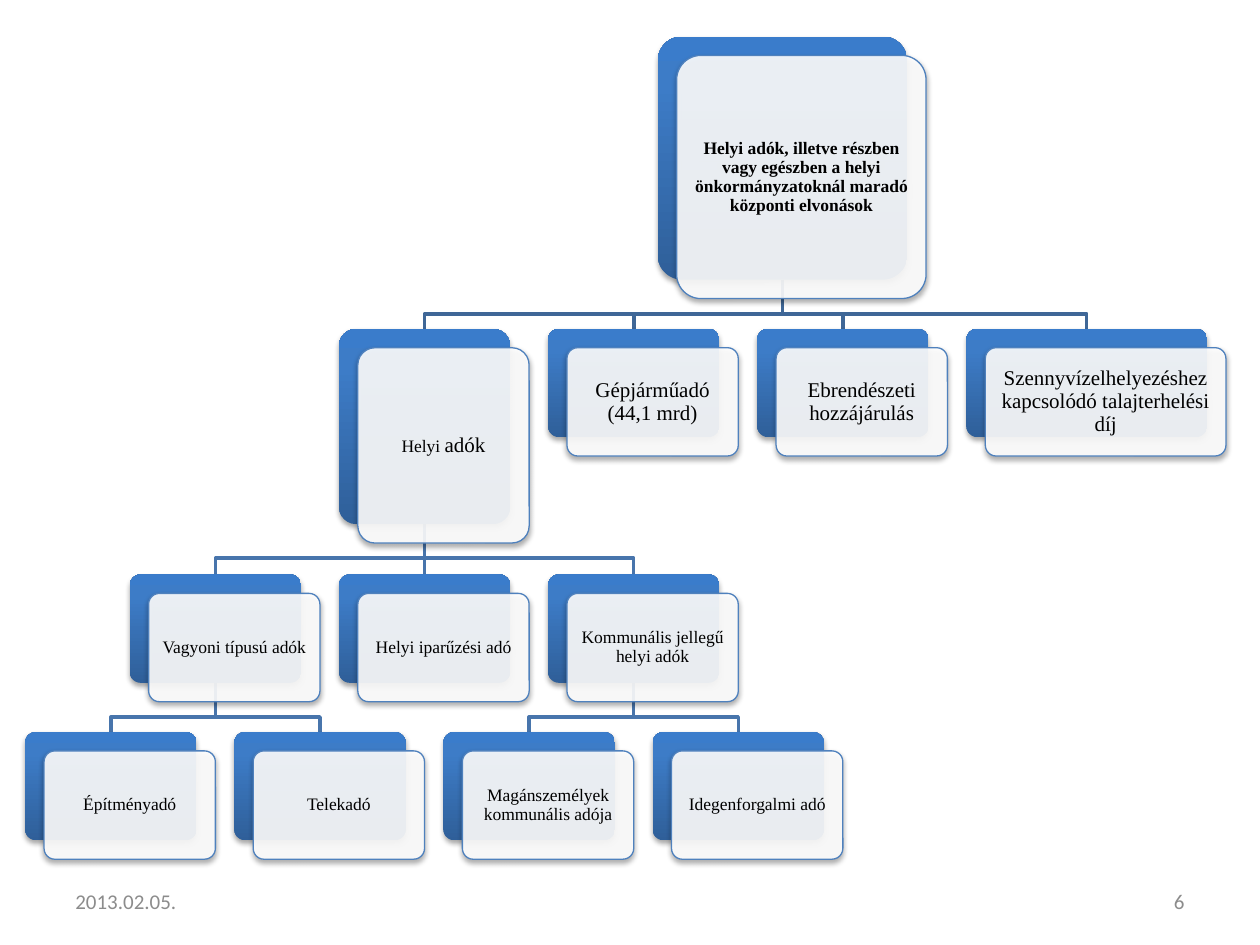
from dataclasses import dataclass

from lxml import etree
from pptx import Presentation
from pptx import util as u
from pptx.dml.color import RGBColor
from pptx.enum import shapes, text
from pptx.oxml.ns import qn


@dataclass(frozen=True)
class Theme:
    font: str = "Times New Roman"
    footer_font: str = "Calibri"
    small: int = 10
    large: int = 12
    ink: str = "000000"
    footer: str = "8C8C8C"
    card: str = "FFFFFF"
    card_line: str = "4F81BD"
    top_link: str = "3F6797"
    link: str = "4875AC"
    gradient: tuple = ((0, "2F5F99"), (80, "3D7CC7"), (100, "3A7CCB"))


@dataclass
class Node:
    left: float
    top: float
    w: float
    h: float
    runs: list  # (wording, type size)
    bold: bool = False
    parent: "Node" = None

    @property
    def centre(self):
        return self.left + self.w / 2


def rgb(value):
    return RGBColor.from_string(value)


class Chart:
    """Draws hierarchy elements on the current slide in one style."""

    OFFSET = 0.15  # front card against its backing
    BEND = 0.27  # drop from a parent to the crossbar

    def __init__(self, slide, theme):
        self.s, self.t = slide, theme

    def link(self, node):
        parent = node.parent
        x1, y1 = parent.centre, parent.top + parent.h
        x2, y2 = node.centre, node.top
        if abs(x1 - x2) < 0.01:
            sp = self.s.shapes.add_connector(
                shapes.MSO_CONNECTOR.STRAIGHT,
                *map(u.Inches, (x1, y1, x2, y2)))
            etree.SubElement(sp._element.spPr, qn("a:effectLst"))
        else:
            bar = y1 + self.BEND
            points = [(x1, bar), (x2, bar), (x2, y2)]
            fb = self.s.shapes.build_freeform(u.Inches(x1), u.Inches(y1))
            fb.add_line_segments(
                [(u.Inches(x), u.Inches(y)) for x, y in points], close=False)
            sp = fb.convert_to_shape()
            sp.fill.background()
            sp.shadow.inherit = False
        color = self.t.link if parent.parent else self.t.top_link
        sp.line.color.rgb = rgb(color)
        sp.line.width = u.Pt(2)

    def rounded(self, node, offset=0.0):
        sp = self.s.shapes.add_shape(
            shapes.MSO_SHAPE.ROUNDED_RECTANGLE,
            *map(u.Inches,
                 (node.left + offset, node.top + offset, node.w, node.h)))
        sp.adjustments[0] = 0.1
        return sp

    def shadow(self, sp):
        sp.shadow.inherit = False
        effects = sp._element.spPr.find(qn("a:effectLst"))
        shadow = etree.SubElement(
            effects, qn("a:outerShdw"), blurRad=str(u.Pt(3.1)),
            dist=str(u.Pt(1.8)), dir="5400000", rotWithShape="0")
        color = etree.SubElement(shadow, qn("a:srgbClr"), val="000000")
        etree.SubElement(color, qn("a:alpha"), val="35000")

    def backing(self, node):
        sp = self.rounded(node)
        sp.fill.gradient()
        sp.fill.gradient_angle = 90
        stops = sp._element.spPr.find(qn("a:gradFill")).find(qn("a:gsLst"))
        for old in list(stops):
            stops.remove(old)
        for pos, color in self.t.gradient:
            gs = etree.SubElement(stops, qn("a:gs"), pos=str(pos * 1000))
            etree.SubElement(gs, qn("a:srgbClr"), val=color)
        sp.line.fill.background()
        self.shadow(sp)

    def card(self, node):
        sp = self.rounded(node, self.OFFSET)
        sp.fill.solid()
        sp.fill.fore_color.rgb = rgb(self.t.card)
        fill = sp._element.spPr.find(qn("a:solidFill"))
        etree.SubElement(fill[0], qn("a:alpha"), val="90000")
        sp.line.color.rgb = rgb(self.t.card_line)
        sp.line.width = u.Pt(0.75)
        self.shadow(sp)

        tf = sp.text_frame
        tf.word_wrap = True
        tf.vertical_anchor = text.MSO_ANCHOR.MIDDLE
        inset = 0.05 if node.runs[0][1] == self.t.large else 0.04
        tf.margin_left = tf.margin_right = u.Inches(inset)
        tf.margin_top = tf.margin_bottom = u.Inches(inset)
        p = tf.paragraphs[0]
        p.alignment = text.PP_ALIGN.CENTER
        p.line_spacing = 0.9
        p.font.name = self.t.font
        p.font.bold = node.bold
        p.font.color.rgb = rgb(self.t.ink)
        for wording, size in node.runs:
            r = p.add_run()
            r.text = wording
            r.font.name = self.t.font
            r.font.size = u.Pt(size)
            r.font.bold = node.bold
            r.font.color.rgb = rgb(self.t.ink)

    def footer(self, left, wording, align):
        sp = self.s.shapes.add_textbox(
            *map(u.Inches, (left, 6.95, 2.33, 0.4)))
        tf = sp.text_frame
        tf.word_wrap = True
        tf.vertical_anchor = text.MSO_ANCHOR.MIDDLE
        p = tf.paragraphs[0]
        p.text = wording
        p.alignment = align
        p.font.name = self.t.footer_font
        p.font.size = u.Pt(self.t.large)
        p.font.color.rgb = rgb(self.t.footer)


def build_nodes(t):
    tops = (0.29, 2.61, 4.56, 5.81)

    def node(parent, level, column, wording, size=t.small, w=1.36, h=0.86):
        runs = [(wording, size)] if isinstance(wording, str) else wording
        return Node(0.2 + 0.83 * column, tops[level], w, h, runs,
                    parent=parent)

    root = Node(5.22, tops[0], 1.98, 1.93, [(
        "Helyi adók, illetve részben vagy egészben a helyi "
        "önkormányzatoknál maradó központi elvonások", t.small)], bold=True)
    local = node(root, 1, 3, [("Helyi ", t.small), ("adók", t.large)], h=1.55)
    wealth = node(local, 2, 1, "Vagyoni típusú adók")
    communal = node(local, 2, 5, "Kommunális jellegű helyi adók")
    return [
        root, local, wealth,
        node(wealth, 3, 0, "Építményadó"),
        node(wealth, 3, 2, "Telekadó"),
        node(local, 2, 3, "Helyi iparűzési adó"),
        communal,
        node(communal, 3, 4, "Magánszemélyek kommunális adója"),
        node(communal, 3, 6, "Idegenforgalmi adó"),
        node(root, 1, 5, "Gépjárműadó (44,1 mrd)", t.large),
        node(root, 1, 7, "Ebrendészeti hozzájárulás", t.large),
        node(root, 1, 9, "Szennyvízelhelyezéshez kapcsolódó "
             "talajterhelési díj", t.large, w=1.91),
    ]


def main():
    prs = Presentation()
    prs.slide_width, prs.slide_height = u.Inches(10), u.Inches(7.5)
    theme = Theme()
    chart = Chart(prs.slides.add_slide(prs.slide_layouts[6]), theme)
    nodes = build_nodes(theme)

    # Links lie behind all boxes
    for node in reversed(nodes):
        if node.parent:
            chart.link(node)

    # Boxes
    for node in nodes:
        chart.backing(node)
        chart.card(node)

    # Date and slide number
    chart.footer(0.5, "2013.02.05.", text.PP_ALIGN.LEFT)
    chart.footer(7.17, "6", text.PP_ALIGN.RIGHT)
    prs.save("out.pptx")


if __name__ == "__main__":
    main()
